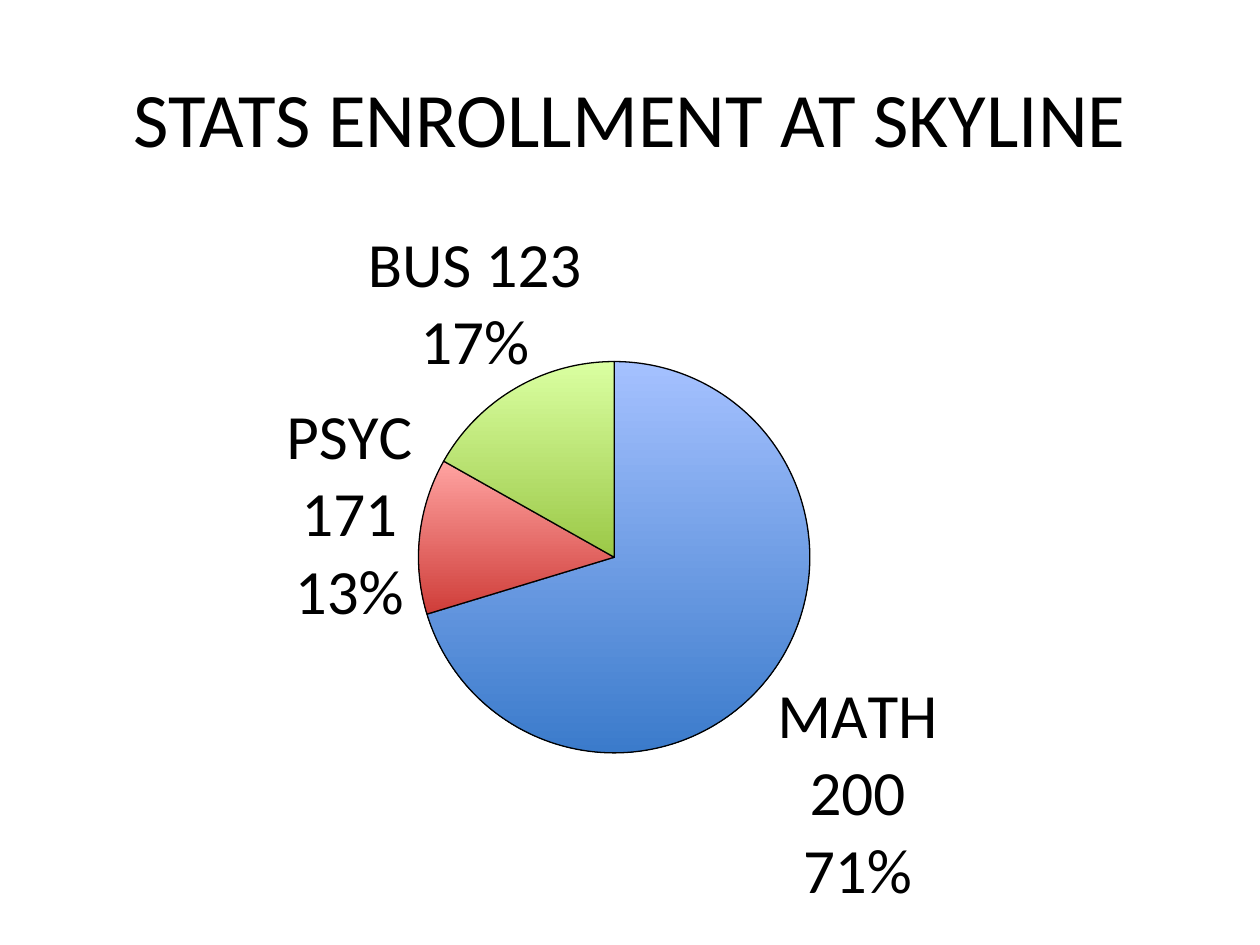
from dataclasses import dataclass

from lxml import etree
from pptx import Presentation
from pptx.chart.data import CategoryChartData
from pptx.dml.color import RGBColor
from pptx.enum.chart import XL_CHART_TYPE, XL_LABEL_POSITION
from pptx.enum.text import MSO_ANCHOR, PP_ALIGN
from pptx.oxml import parse_xml
from pptx.oxml.ns import nsdecls, qn
from pptx.util import Pt

PIE = XL_CHART_TYPE.PIE
OUTSIDE = XL_LABEL_POSITION.OUTSIDE_END
CENTER = PP_ALIGN.CENTER
MIDDLE = MSO_ANCHOR.MIDDLE

FONT = "Calibri"
BLACK = RGBColor(0x00, 0x00, 0x00)
BLUE_TOP, BLUE_BOTTOM = RGBColor(0xA5, 0xC1, 0xFF), RGBColor(0x3B, 0x7B, 0xCB)
RED_TOP, RED_BOTTOM = RGBColor(0xFF, 0xA3, 0xA1), RGBColor(0xCF, 0x3D, 0x39)
GREEN_TOP, GREEN_BOTTOM = RGBColor(0xDA, 0xFF, 0xA1), RGBColor(0x9B, 0xC8, 0x47)


@dataclass(frozen=True)
class Course:
    """One slice; the label shifts are fractions of the chart's size."""
    name: str
    percent: int
    top: RGBColor
    bottom: RGBColor
    shift_x: float = 0
    shift_y: float = 0


COURSES = (
    Course("MATH 200", 71, BLUE_TOP, BLUE_BOTTOM),
    Course("PSYC 171", 13, RED_TOP, RED_BOTTOM, shift_y=0.13),
    Course("BUS 123", 17, GREEN_TOP, GREEN_BOTTOM, shift_x=0.06),
)


def write_text(frame, text: str, *, size: float, color: RGBColor = BLACK,
               align=CENTER) -> None:
    frame.word_wrap = True
    for index, line in enumerate(text.split("\n")):
        para = frame.paragraphs[0] if index == 0 else frame.add_paragraph()
        para.alignment = align
        span = para.add_run()
        span.text = line
        span.font.name = FONT
        span.font.size = Pt(size)
        span.font.color.rgb = color


def manual_layout(settings: dict[str, str | float]):
    layout = parse_xml(f'<c:layout {nsdecls("c")}><c:manualLayout/></c:layout>')
    for tag, value in settings.items():
        etree.SubElement(layout[0], qn(f"c:{tag}")).set("val", str(value))
    return layout


def place_plot(chart, x: float, y: float, width: float, height: float) -> None:
    """Fix the inner plot area, in fractions of the chart's size."""
    plot_area = chart._chartSpace.chart.plotArea
    for old in plot_area.findall(qn("c:layout")):
        plot_area.remove(old)
    plot_area.insert(0, manual_layout({
        "layoutTarget": "inner", "xMode": "edge", "yMode": "edge",
        "x": x, "y": y, "w": width, "h": height}))


def format_slice(point, course: Course) -> None:
    fill = point.format.fill
    fill.gradient()
    fill.gradient_angle = 270
    for stop, color in zip(fill.gradient_stops, (course.top, course.bottom)):
        stop.color.rgb = color
    point.format.line.color.rgb = BLACK
    point.format.line.width = Pt(0.75)
    label = point.data_label
    write_text(label.text_frame, f"{course.name}\n{course.percent}%", size=36)
    label.position = OUTSIDE


def show_name_and_percent(series) -> None:
    labels = series.data_labels
    labels.show_value = False
    labels.show_category_name = True
    labels.show_percentage = True
    labels.position = OUTSIDE
    labels.font.name = FONT
    labels.font.size = Pt(36)
    labels.font.color.rgb = BLACK
    for leader in series._element.iter(qn("c:showLeaderLines")):
        leader.set("val", "0")
    flags = {"c:showVal": "0", "c:showCatName": "1", "c:showPercent": "1"}
    for label, course in zip(series._element.iter(qn("c:dLbl")), COURSES):
        for tag, value in flags.items():
            label.find(qn(tag)).set("val", value)
        etree.SubElement(label, qn("c:separator")).text = "\n"
        if course.shift_x or course.shift_y:
            label.find(qn("c:idx")).addnext(
                manual_layout({"x": course.shift_x, "y": course.shift_y}))


def add_enrollment_pie(page) -> None:
    data = CategoryChartData()
    data.categories = [course.name for course in COURSES]
    data.add_series("Series 1", [course.percent for course in COURSES])
    chart = page.shapes.add_chart(
        PIE, Pt(18), Pt(118), Pt(666), Pt(422), data).chart
    chart.has_title = False
    chart.has_legend = False
    chart.font.name = FONT
    chart.font.size = Pt(10)
    chart.font.color.rgb = BLACK
    plot = chart.plots[0]
    plot.vary_by_categories = True
    place_plot(chart, 0.33, 0.21, 0.34, 0.53)
    series = plot.series[0]
    for index, course in enumerate(COURSES):
        format_slice(series.points[index], course)
    show_name_and_percent(series)


def main() -> None:
    deck = Presentation()
    deck.slide_width, deck.slide_height = Pt(720), Pt(540)
    page = deck.slides.add_slide(deck.slide_layouts[5])
    add_enrollment_pie(page)
    title = page.shapes.title
    title.left, title.top, title.width, title.height = Pt(36), Pt(21.6), Pt(648), Pt(90)
    title.text_frame.vertical_anchor = MIDDLE
    write_text(title.text_frame, "STATS ENROLLMENT AT SKYLINE", size=44)
    deck.save("out.pptx")


if __name__ == "__main__":
    main()
